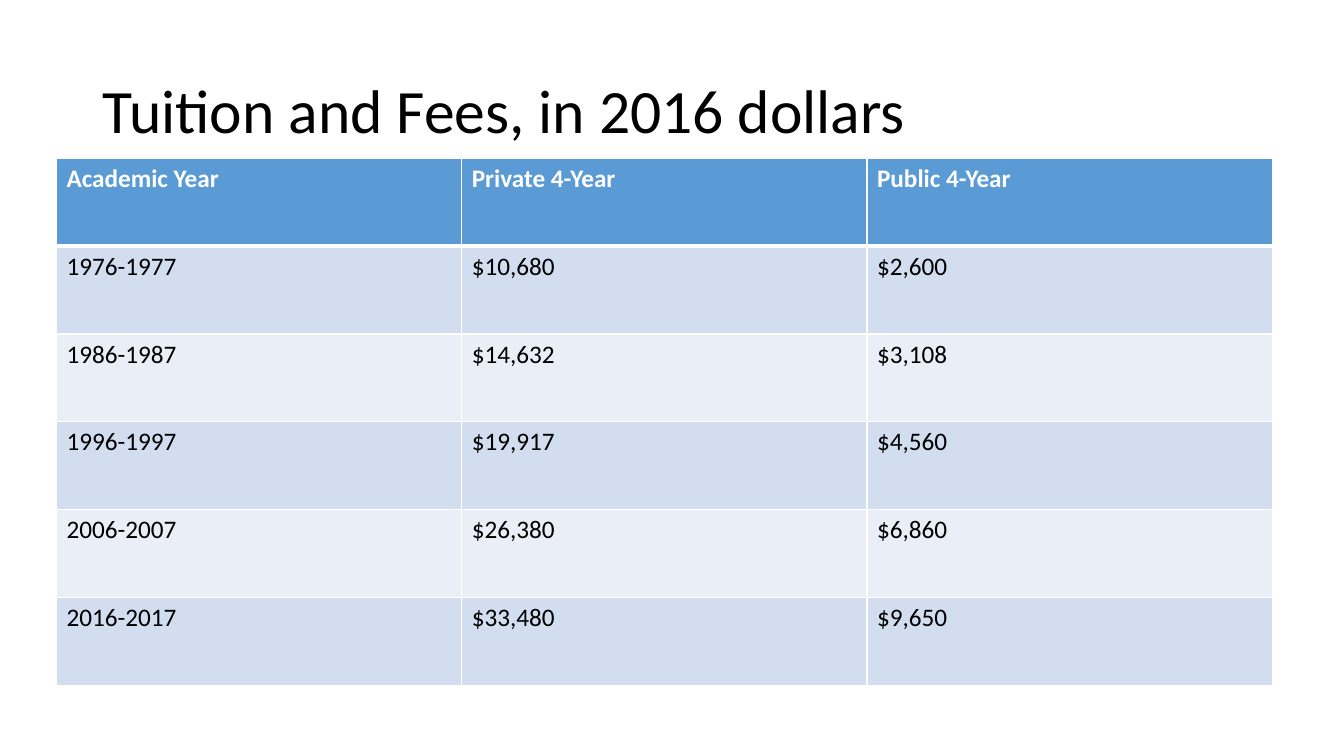
from dataclasses import dataclass

from lxml import etree
from pptx import Presentation
from pptx import util as u
from pptx.dml.color import RGBColor
from pptx.enum import text
from pptx.oxml.ns import qn


@dataclass(frozen=True)
class Theme:
    """Colours, font and type sizes of the deck."""
    font: str = "Calibri"
    ink: str = "000000"
    paper: str = "FFFFFF"
    header: str = "5B9BD5"
    bands: tuple = ("D2DEEF", "EAEFF7")
    title_size: int = 44
    body_size: int = 18
    thin_rule: int = 1
    thick_rule: int = 3


THEME = Theme()

TUITION = [
    ("Academic Year", "Private 4-Year", "Public 4-Year"),
    ("1976-1977", "$10,680", "$2,600"),
    ("1986-1987", "$14,632", "$3,108"),
    ("1996-1997", "$19,917", "$4,560"),
    ("2006-2007", "$26,380", "$6,860"),
    ("2016-2017", "$33,480", "$9,650"),
]


def add_span(para, wording, size, colour, bold=False):
    """Add one formatted run to a paragraph."""
    span = para.add_run()
    span.text = wording
    span.font.name = THEME.font
    span.font.size = u.Pt(size)
    span.font.bold = bold
    span.font.color.rgb = RGBColor.from_string(colour)


def add_borders(cell, top, bottom):
    """Rule all four sides of a cell, with the given top and bottom widths in points."""
    properties = cell._tc.get_or_add_tcPr()
    widths = {"lnL": THEME.thin_rule, "lnR": THEME.thin_rule, "lnT": top, "lnB": bottom}
    for side, width in widths.items():
        line = etree.SubElement(properties, qn(f"a:{side}"), w=str(u.Pt(width)))
        fill = etree.SubElement(line, qn("a:solidFill"))
        etree.SubElement(fill, qn("a:srgbClr"), val=THEME.paper)


def place_title(page, wording, left, top, width, height):
    """Fit the title placeholder to its box and fill it."""
    title = page.shapes.title
    title.left, title.top, title.width, title.height = map(u.Inches, (left, top, width, height))
    frame = title.text_frame
    frame.word_wrap = True
    frame.auto_size = text.MSO_AUTO_SIZE.NONE
    frame.vertical_anchor = text.MSO_ANCHOR.MIDDLE
    para = frame.paragraphs[0]
    para.alignment = text.PP_ALIGN.LEFT
    para.line_spacing = 0.9
    add_span(para, wording, THEME.title_size, THEME.ink)


def place_table(page, rows, left, top, width, height):
    """Draw a banded table with a header row and equal columns and rows in its box."""
    box = map(u.Inches, (left, top, width, height))
    table = page.shapes.add_table(len(rows), len(rows[0]), *box).table
    for row_index, row in enumerate(rows):
        is_header = row_index == 0
        fill = THEME.header if is_header else THEME.bands[(row_index - 1) % 2]
        colour = THEME.paper if is_header else THEME.ink
        top_rule = THEME.thick_rule if row_index == 1 else THEME.thin_rule
        bottom_rule = THEME.thick_rule if is_header else THEME.thin_rule
        for column_index, wording in enumerate(row):
            cell = table.cell(row_index, column_index)
            add_borders(cell, top_rule, bottom_rule)
            cell.fill.solid()
            cell.fill.fore_color.rgb = RGBColor.from_string(fill)
            add_span(cell.text_frame.paragraphs[0], wording, THEME.body_size, colour, is_header)


def build_tuition_page(deck):
    """Add the page that compares tuition by academic year."""
    page = deck.slides.add_slide(deck.slide_layouts[5])
    place_title(page, "Tuition and Fees, in 2016 dollars", 0.92, 0.4, 11.5, 1.45)
    place_table(page, TUITION, 0.56, 1.57, 12.06, 5.23)


def main():
    """Build and save the deck."""
    deck = Presentation()
    deck.slide_width, deck.slide_height = u.Inches(13.33), u.Inches(7.5)
    build_tuition_page(deck)
    deck.save("out.pptx")


if __name__ == "__main__":
    main()
